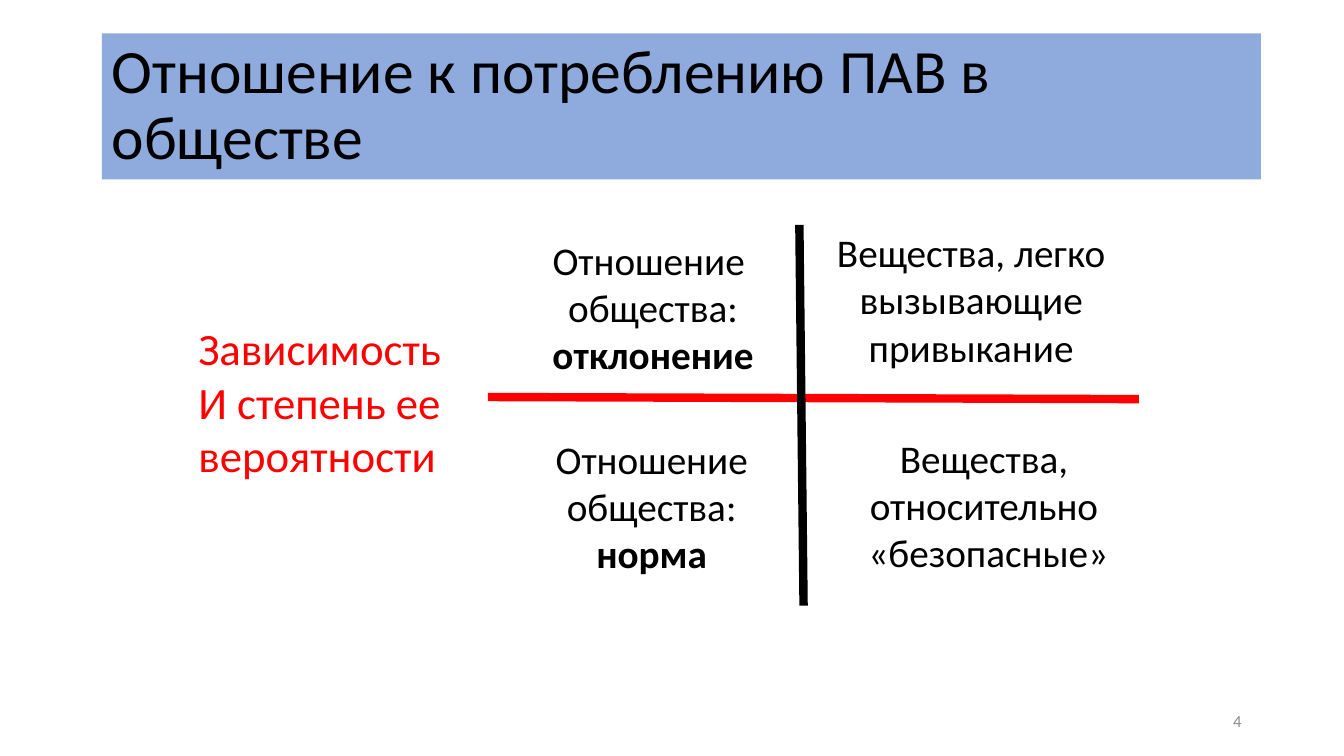
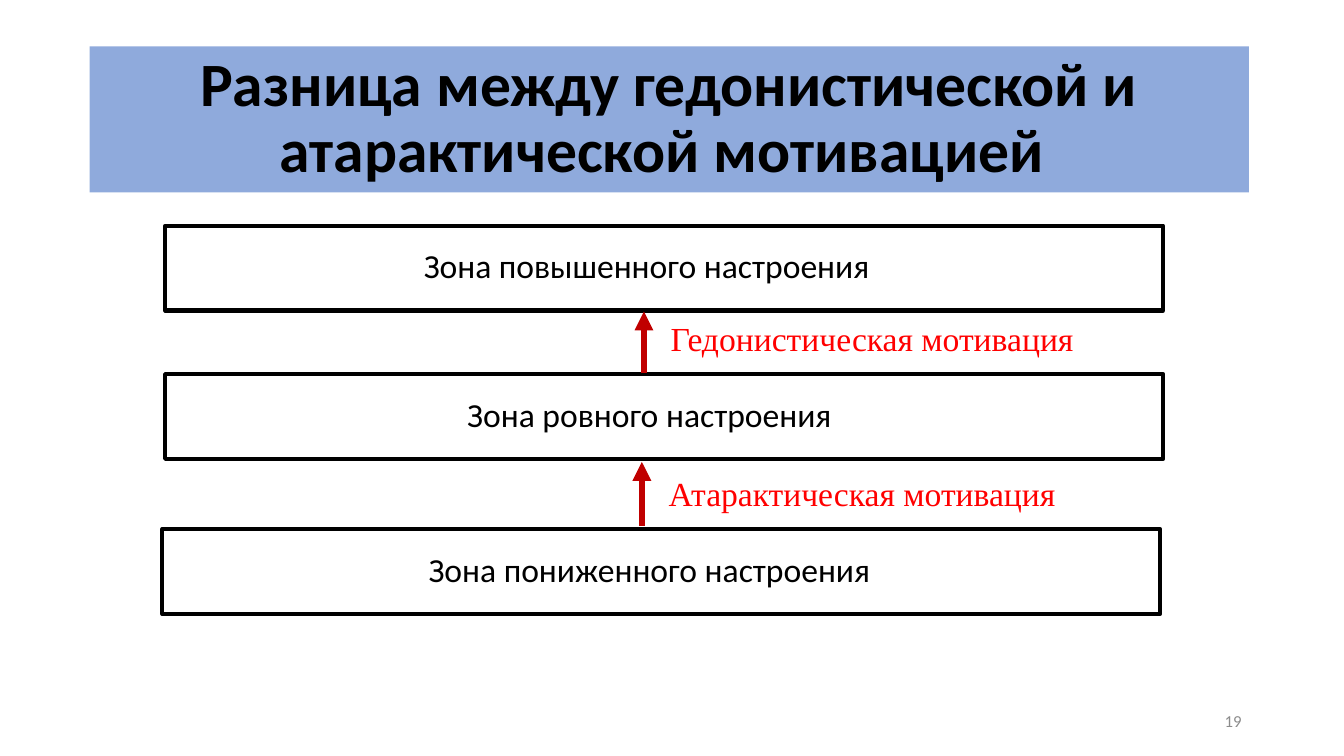
from dataclasses import dataclass

from lxml import etree
from pptx import Presentation
from pptx.dml.color import RGBColor
from pptx.enum import shapes, text
from pptx.oxml.ns import qn
from pptx.util import Pt


@dataclass(frozen=True)
class Theme:
    """Colours, fonts and type sizes of the deck."""
    band: str = "8FAADC"
    ink: str = "000000"
    paper: str = "FFFFFF"
    accent: str = "FF0000"
    arrow: str = "C00000"
    muted: str = "8C8C8C"
    sans: str = "Calibri"
    serif: str = "Times New Roman"
    title: int = 44
    side: int = 32
    body: int = 28
    label: int = 24
    number: int = 12


@dataclass(frozen=True)
class Box:
    """A rectangle in points."""
    left: float
    top: float
    width: float
    height: float

    def inner(self, left, top, width, height):
        """Return a box placed relative to this one."""
        return Box(self.left + left, self.top + top, width, height)

    def lengths(self):
        """Return the four lengths for python-pptx."""
        return Pt(self.left), Pt(self.top), Pt(self.width), Pt(self.height)


THEME = Theme()
LEFT, CENTER, RIGHT = text.PP_ALIGN.LEFT, text.PP_ALIGN.CENTER, text.PP_ALIGN.RIGHT
MIDDLE = text.MSO_ANCHOR.MIDDLE


def write(frame, words, size, color=THEME.ink, font=THEME.sans, align=LEFT, bold_last=False):
    """Fill a text frame with formatted lines."""
    frame.text = words
    for para in frame.paragraphs:
        para.alignment = align
        for span in para.runs:
            span.font.size = Pt(size)
            span.font.name = font
            span.font.color.rgb = RGBColor.from_string(color)
    for span in frame.paragraphs[-1].runs:
        span.font.bold = bold_last


def add_label(page, box, words, size, **style):
    """Add an unwrapped text box that grows with its text."""
    frame = page.shapes.add_textbox(*box.lengths()).text_frame
    frame.word_wrap = False
    frame.auto_size = text.MSO_AUTO_SIZE.SHAPE_TO_FIT_TEXT
    write(frame, words, size, **style)


def add_panel(page, box, kind, fill, line=None, width=0):
    """Add a flat filled shape and return it."""
    panel = page.shapes.add_shape(kind, *box.lengths())
    panel.shadow.inherit = False
    panel.fill.solid()
    panel.fill.fore_color.rgb = RGBColor.from_string(fill)
    if line:
        panel.line.color.rgb = RGBColor.from_string(line)
        panel.line.width = Pt(width)
    else:
        panel.line.fill.background()
    panel.text_frame.word_wrap = True
    panel.text_frame.vertical_anchor = MIDDLE
    return panel


def add_line(page, start, end, color, width, arrow=False):
    """Add a straight line, with an arrowhead at its end if asked."""
    line = page.shapes.add_connector(shapes.MSO_CONNECTOR.STRAIGHT, *map(Pt, start + end))
    line.line.color.rgb = RGBColor.from_string(color)
    line.line.width = Pt(width)
    if arrow:
        etree.SubElement(line.line._get_or_add_ln(), qn("a:tailEnd"), type="triangle")
    etree.SubElement(line._element.spPr, qn("a:effectLst"))


def add_page(deck, title_box, title, number, align=LEFT, bold=False):
    """Add a page with its title band and page number."""
    page = deck.slides.add_slide(deck.slide_layouts[6])
    band = add_panel(page, title_box, shapes.MSO_SHAPE.RECTANGLE, THEME.band)
    write(band.text_frame, title, THEME.title, align=align, bold_last=bold)
    band.text_frame.paragraphs[0].line_spacing = 0.9
    footer = page.shapes.add_textbox(*Box(678, 500.4, 216, 28.8).lengths()).text_frame
    footer.word_wrap = True
    footer.vertical_anchor = MIDDLE
    write(footer, str(number), THEME.number, color=THEME.muted, align=RIGHT)
    return page


def add_quadrants(page, box, quadrants):
    """Draw the crossed axes and the text of the four quadrants."""
    add_line(page, (box.left, box.top + 123), (box.left + box.width, box.top + 124.5),
             THEME.accent, 6)
    add_line(page, (box.left + 222.5, box.top), (box.left + 225.5, box.top + box.height),
             THEME.ink, 6)
    for left, top, width, words, bold in quadrants:
        add_label(page, box.inner(left, top, width, 108.7), words, THEME.body,
                  align=CENTER, bold_last=bold)


def add_mood_zones(page, box, zones, motives):
    """Stack the mood zones and join them with labelled arrows."""
    placed = []
    for shift, top, inset, words in zones:
        zone = box.inner(shift, top, box.width, 60.5)
        panel = add_panel(page, zone, shapes.MSO_SHAPE.FLOWCHART_PROCESS,
                          THEME.paper, THEME.ink, 3)
        frame = panel.text_frame
        frame.margin_left = frame.margin_top = 0
        frame.margin_right, frame.margin_bottom = Pt(inset), Pt(4)
        write(frame, words, THEME.label, align=CENTER)
        placed.append(zone)
    for upper, lower, motive in zip(placed, placed[1:], motives):
        across, clearance, drop, width, words = motive
        x = box.left + across
        bottom = upper.top + upper.height
        add_line(page, (x, lower.top - clearance), (x, bottom + clearance),
                 THEME.arrow, 4.5, arrow=True)
        add_label(page, Box(x + 12, bottom + drop, width, 36), words, THEME.label,
                  color=THEME.accent, font=THEME.serif)


def build_attitude(deck):
    """Build the page on attitudes in society."""
    page = add_page(deck, Box(72.7, 23.8, 828, 104.4),
                    "Отношение к потреблению ПАВ в обществе", 4)
    add_quadrants(page, Box(348.5, 160.6, 465, 272), [
        (38, 4.3, 160, "Отношение \nобщества:\nотклонение", True),
        (40.3, 146.8, 153.4, "Отношение\nобщества:\nнорма", True),
        (241.2, -0.8, 208, "Вещества, легко\n вызывающие \nпривыкание", False),
        (263.5, 146.1, 188, "Вещества, \nотносительно \n«безопасные»", False),
    ])
    add_label(page, Box(134.6, 225.4, 196.6, 123.8),
              "Зависимость\nИ степень ее\nвероятности", THEME.side, color=THEME.accent)


def build_motivation(deck):
    """Build the page on the two kinds of motivation."""
    page = add_page(deck, Box(64.1, 33.1, 828, 104.4),
                    "Разница между гедонистической и атарактической мотивацией ", 19,
                    align=CENTER, bold=True)
    add_mood_zones(page, Box(118, 161.3, 712.8, 277), [
        (0, 0, 25, "Зона повышенного настроения"),
        (0, 106, 21, "Зона ровного настроения"),
        (-2, 216.7, 17, "Зона пониженного настроения"),
    ], [
        (342, 0.7, 2, 305.3, "Гедонистическая мотивация"),
        (340.5, 2.2, 6.5, 293.8, "Атарактическая мотивация"),
    ])


def main():
    """Build and save the deck."""
    deck = Presentation()
    deck.slide_width, deck.slide_height = Pt(960), Pt(540)
    build_attitude(deck)
    build_motivation(deck)
    deck.save("out.pptx")


if __name__ == "__main__":
    main()
